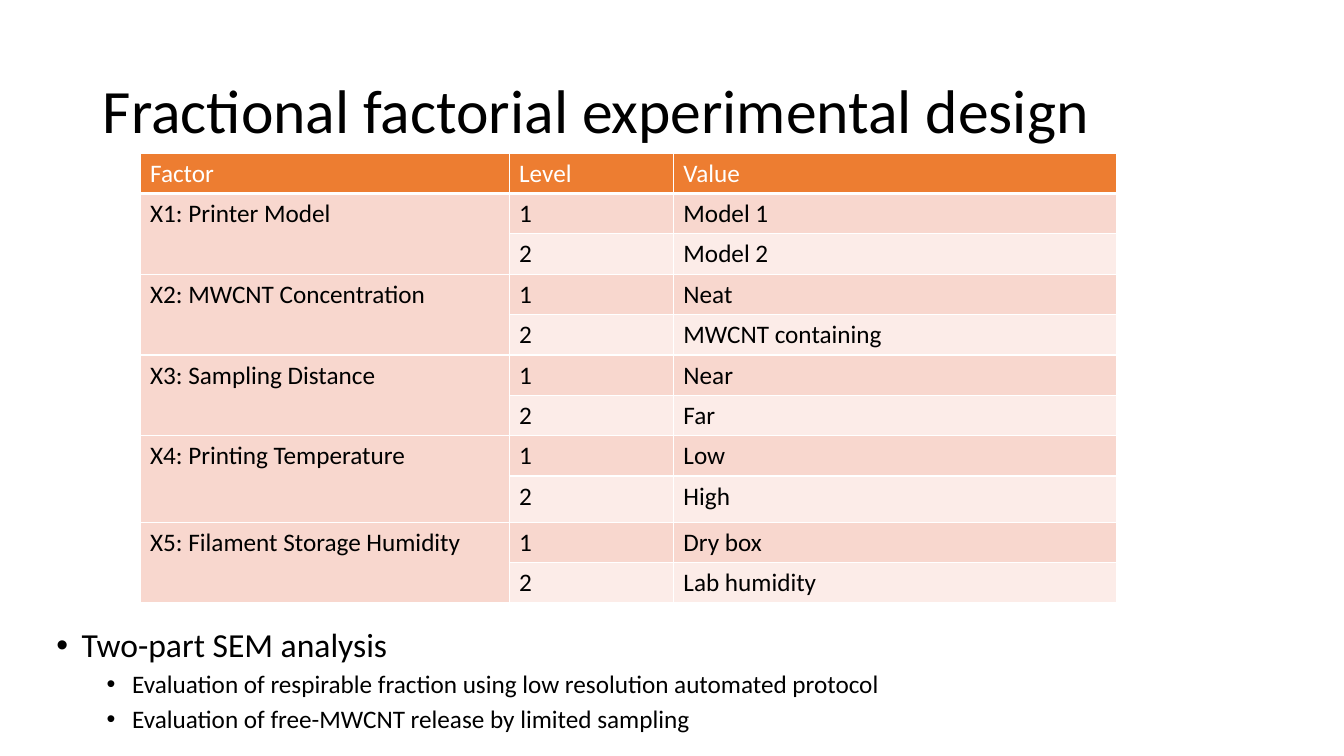
from lxml.etree import SubElement
from pptx import Presentation
from pptx.dml.color import RGBColor
from pptx.enum.text import MSO_ANCHOR as Anchor
from pptx.oxml.ns import qn
from pptx.util import Cm, Pt

BLACK = RGBColor(0x00, 0x00, 0x00)
WHITE = RGBColor(0xFF, 0xFF, 0xFF)
ORANGE = RGBColor(0xED, 0x7D, 0x31)
BAND_DARK = RGBColor(0xF8, 0xD7, 0xCE)
BAND_LIGHT = RGBColor(0xFC, 0xEC, 0xE8)

TITLE = "Fractional factorial experimental design"
HEADINGS = ("Factor", "Level", "Value")
FACTORS = (
    ("X1: Printer Model", ("Model 1", "Model 2")),
    ("X2: MWCNT Concentration", ("Neat", "MWCNT containing")),
    ("X3: Sampling Distance", ("Near", "Far")),
    ("X4: Printing Temperature", ("Low", "High")),
    ("X5: Filament Storage Humidity", ("Dry box", "Lab humidity")),
)
COLUMN_WIDTHS = (9.3, 4.14, 11.18)
ROW_HEIGHT = 0.94
HIGH_ROW, HIGH_ROW_HEIGHT = 8, 1.16
ANALYSIS = (
    (0, "Two-part SEM analysis"),
    (1, "Evaluation of respirable fraction using low resolution automated protocol"),
    (1, "Evaluation of free-MWCNT release by limited sampling"),
)
# size, space before, left margin in cm for each outline level
BULLET_LEVELS = ((24, 10, 0.64), (18, 5, 1.91))
HANGING = 0.64


def write(paragraph, text, size, color=BLACK, **paragraph_format):
    run = paragraph.add_run()
    run.text = text
    for name, value in {"name": "Calibri", "size": Pt(size)}.items():
        setattr(run.font, name, value)
    run.font.color.rgb = color
    for name, value in paragraph_format.items():
        setattr(paragraph, name, value)


def add_text_frame(slide, box, anchor):
    frame = slide.shapes.add_textbox(*map(Cm, box)).text_frame
    for name, value in {"word_wrap": True, "vertical_anchor": anchor}.items():
        setattr(frame, name, value)
    return frame


def add_title(slide, box):
    frame = add_text_frame(slide, box, Anchor.MIDDLE)
    write(frame.paragraphs[0], TITLE, 44, line_spacing=0.9)


def add_borders(cell, bottom):
    """Draw white cell edges, 1 pt wide except for the bottom one."""
    properties = cell._tc.get_or_add_tcPr()
    for edge, width in {"lnL": 1, "lnR": 1, "lnT": 1, "lnB": bottom}.items():
        line = SubElement(properties, qn(f"a:{edge}"), w=str(Pt(width)))
        fill = SubElement(line, qn("a:solidFill"))
        SubElement(fill, qn("a:srgbClr"), val=str(WHITE))


def fill_cell(cell, text, fill, color=BLACK, bottom=1):
    add_borders(cell, bottom)
    cell.fill.solid()
    cell.fill.fore_color.rgb = fill
    if text:
        write(cell.text_frame.paragraphs[0], text, 18, color)


def add_factor_table(slide, box):
    row_count = 1 + sum(len(values) for _, values in FACTORS)
    frame = slide.shapes.add_table(row_count, len(HEADINGS), *map(Cm, box))
    table = frame.table
    for column, width in zip(table.columns, COLUMN_WIDTHS):
        column.width = Cm(width)
    for index, row in enumerate(table.rows):
        row.height = Cm(HIGH_ROW_HEIGHT if index == HIGH_ROW else ROW_HEIGHT)
    frame.height = Cm(box[3])

    for column, heading in enumerate(HEADINGS):
        fill_cell(table.cell(0, column), heading, ORANGE, WHITE, bottom=3)
    top = 1
    for factor, values in FACTORS:
        for offset, value in enumerate(values):
            band = BAND_LIGHT if offset % 2 else BAND_DARK
            row = top + offset
            fill_cell(table.cell(row, 0), "" if offset else factor, BAND_DARK)
            fill_cell(table.cell(row, 1), str(offset + 1), band)
            fill_cell(table.cell(row, 2), value, band)
        table.cell(top, 0).merge(table.cell(row, 0))
        top += len(values)


def add_bullet(paragraph, margin):
    properties = paragraph._p.get_or_add_pPr()
    properties.set("marL", str(Cm(margin)))
    properties.set("indent", str(-Cm(HANGING)))
    SubElement(properties, qn("a:buFont"), typeface="Arial")
    SubElement(properties, qn("a:buChar"), char="•")


def add_analysis(slide, box):
    frame = add_text_frame(slide, box, Anchor.TOP)
    for index, (level, text) in enumerate(ANALYSIS):
        paragraph = frame.add_paragraph() if index else frame.paragraphs[0]
        size, space, margin = BULLET_LEVELS[level]
        write(paragraph, text, size, level=level, line_spacing=0.9,
              space_before=Pt(space))
        add_bullet(paragraph, margin)


def main():
    deck = Presentation()
    deck.slide_width, deck.slide_height = Cm(33.87), Cm(19.05)
    slide = deck.slides.add_slide(deck.slide_layouts[6])
    add_title(slide, (2.34, 1.02, 29.21, 3.68))
    add_factor_table(slide, (3.53, 3.86, 24.62, 11.33))
    add_analysis(slide, (1.17, 15.72, 29.92, 3.25))
    deck.save("out.pptx")


if __name__ == "__main__":
    main()
